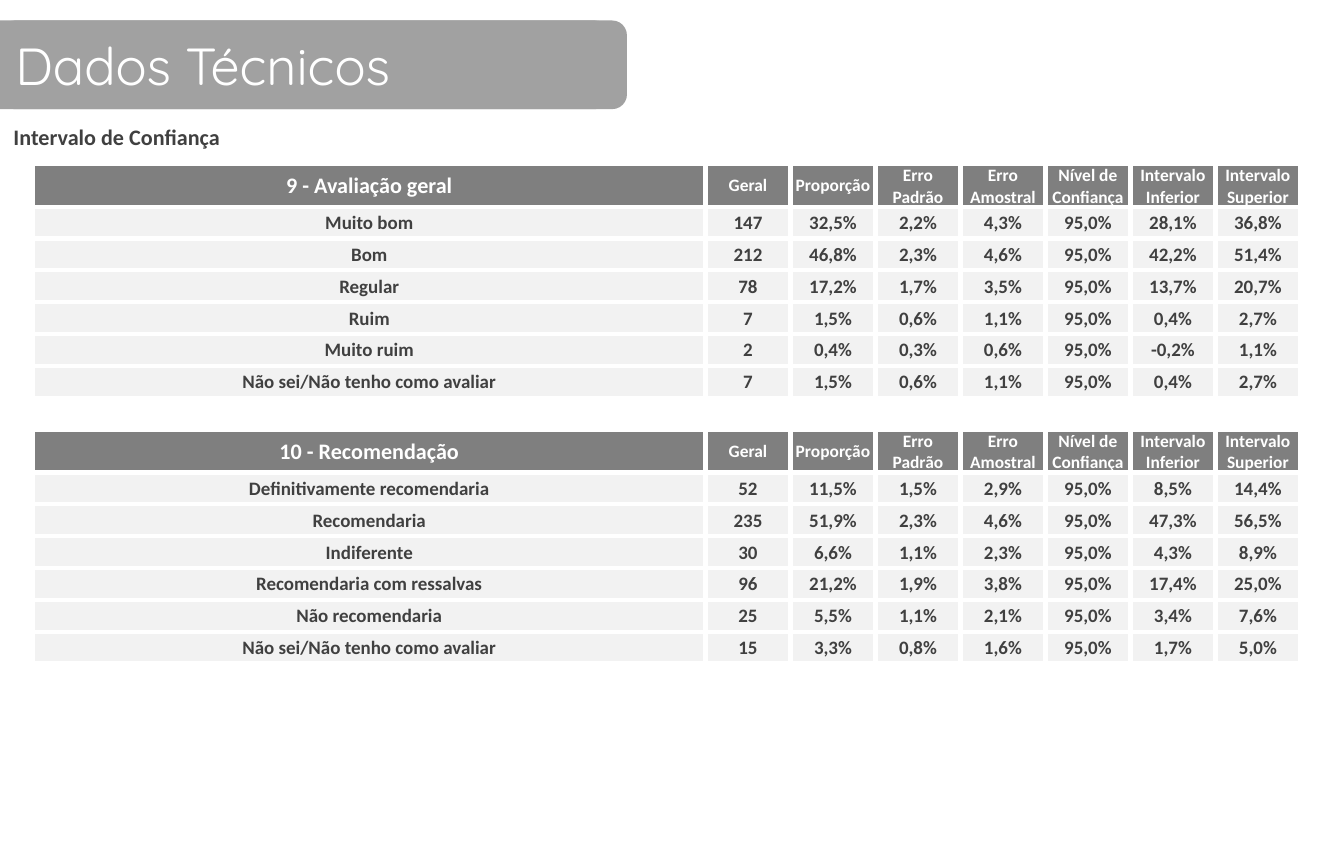
from dataclasses import dataclass

from pptx import Presentation
from pptx import util as u
from pptx.dml.color import RGBColor
from pptx.enum import shapes, text
from pptx.oxml import ns
from lxml import etree


@dataclass
class Theme:
    band: str = "A1A1A1"
    header: str = "7F7F7F"
    body: str = "F2F2F2"
    ink: str = "404040"
    white: str = "FFFFFF"
    title_font: str = "Quicksand"
    text_font: str = "Calibri"
    title_size: int = 33
    heading_size: int = 14
    label_size: int = 11
    body_size: int = 12
    border_width: int = 3


COLUMNS = ["Geral", "Proporção", "Erro Padrão", "Erro Amostral",
           "Nível de Confiança", "Intervalo Inferior", "Intervalo Superior"]
TABLE_WIDTH, ANSWER_WIDTH = 11.14, 5.91
VALUE_WIDTH = (TABLE_WIDTH - ANSWER_WIDTH) / len(COLUMNS)
COLUMN_WIDTHS = [ANSWER_WIDTH] + [VALUE_WIDTH] * len(COLUMNS)
HEADER_HEIGHT, ROW_HEIGHT = 0.36, 0.28

# Each row: answer, count, proportion, standard error, sampling error,
# confidence level, lower and upper limit
QUESTIONS = {
    "9 - Avaliação geral": [
        ["Muito bom", "147", "32,5%", "2,2%", "4,3%", "95,0%", "28,1%", "36,8%"],
        ["Bom", "212", "46,8%", "2,3%", "4,6%", "95,0%", "42,2%", "51,4%"],
        ["Regular", "78", "17,2%", "1,7%", "3,5%", "95,0%", "13,7%", "20,7%"],
        ["Ruim", "7", "1,5%", "0,6%", "1,1%", "95,0%", "0,4%", "2,7%"],
        ["Muito ruim", "2", "0,4%", "0,3%", "0,6%", "95,0%", "-0,2%", "1,1%"],
        ["Não sei/Não tenho como avaliar", "7", "1,5%", "0,6%", "1,1%", "95,0%", "0,4%", "2,7%"],
    ],
    "10 - Recomendação": [
        ["Definitivamente recomendaria", "52", "11,5%", "1,5%", "2,9%", "95,0%", "8,5%", "14,4%"],
        ["Recomendaria", "235", "51,9%", "2,3%", "4,6%", "95,0%", "47,3%", "56,5%"],
        ["Indiferente", "30", "6,6%", "1,1%", "2,3%", "95,0%", "4,3%", "8,9%"],
        ["Recomendaria com ressalvas", "96", "21,2%", "1,9%", "3,8%", "95,0%", "17,4%", "25,0%"],
        ["Não recomendaria", "25", "5,5%", "1,1%", "2,1%", "95,0%", "3,4%", "7,6%"],
        ["Não sei/Não tenho como avaliar", "15", "3,3%", "0,8%", "1,6%", "95,0%", "1,7%", "5,0%"],
    ],
}


class SlideBuilder:
    def __init__(self, page, theme):
        self.page = page
        self.theme = theme

    def span(self, para, words, size, color, font=None, bold=True):
        span = para.add_run()
        span.text = words
        span.font.name = font or self.theme.text_font
        span.font.size = u.Pt(size)
        span.font.bold = bold
        span.font.color.rgb = RGBColor.from_string(color)

    def band(self, left, top, width, height):
        box = self.page.shapes.add_shape(
            shapes.MSO_SHAPE.ROUNDED_RECTANGLE,
            u.Inches(left), u.Inches(top), u.Inches(width), u.Inches(height))
        box.shadow.inherit = False
        box.fill.solid()
        box.fill.fore_color.rgb = RGBColor.from_string(self.theme.band)
        box.line.fill.background()
        return box

    def title(self, words, left, top, width, height):
        frame = self.band(left, top, width, height).text_frame
        frame.vertical_anchor = text.MSO_ANCHOR.MIDDLE
        para = frame.paragraphs[0]
        para.alignment = text.PP_ALIGN.LEFT
        self.span(para, words, self.theme.title_size, self.theme.white,
                  self.theme.title_font, bold=False)

    def heading(self, words, left, top, width, height):
        box = self.page.shapes.add_textbox(
            u.Inches(left), u.Inches(top), u.Inches(width), u.Inches(height))
        box.text_frame.word_wrap = False
        box.text_frame.auto_size = text.MSO_AUTO_SIZE.SHAPE_TO_FIT_TEXT
        self.span(box.text_frame.paragraphs[0], words,
                  self.theme.heading_size, self.theme.ink)

    def borders(self, cell):
        properties = cell._tc.get_or_add_tcPr()
        for index, side in enumerate(("a:lnL", "a:lnR", "a:lnT", "a:lnB")):
            line = etree.Element(ns.qn(side), w=str(u.Pt(self.theme.border_width)))
            fill = etree.SubElement(line, ns.qn("a:solidFill"))
            etree.SubElement(fill, ns.qn("a:srgbClr"), val=self.theme.white)
            properties.insert(index, line)

    def cell(self, cell, words, size, color, fill):
        cell.vertical_anchor = text.MSO_ANCHOR.MIDDLE
        cell.margin_left = cell.margin_right = cell.margin_top = u.Inches(0.01)
        cell.margin_bottom = 0
        para = cell.text_frame.paragraphs[0]
        para.alignment = text.PP_ALIGN.CENTER
        if words:
            self.span(para, words, size, color)
            cell.fill.solid()
            cell.fill.fore_color.rgb = RGBColor.from_string(fill)
        else:
            # An empty cell needs its own type size to keep the row low
            etree.SubElement(para._p, ns.qn("a:endParaRPr"), sz=str(size * 100))
            cell.fill.background()
        self.borders(cell)

    def table(self, questions, left, top):
        theme = self.theme
        rows = []
        for question, answers in questions.items():
            if rows:
                rows.append((False, [""] * len(COLUMN_WIDTHS)))
            rows.append((True, [question] + COLUMNS))
            rows += [(False, answer) for answer in answers]
        heights = [HEADER_HEIGHT if is_header else ROW_HEIGHT for is_header, _ in rows]

        table = self.page.shapes.add_table(
            len(rows), len(COLUMN_WIDTHS), u.Inches(left), u.Inches(top),
            u.Inches(TABLE_WIDTH), u.Inches(sum(heights))).table
        table.first_row = table.horz_banding = False
        for column, width in zip(table.columns, COLUMN_WIDTHS):
            column.width = u.Inches(width)
        for row, height, (is_header, values) in zip(table.rows, heights, rows):
            row.height = u.Inches(height)
            for index, (cell, words) in enumerate(zip(row.cells, values)):
                if is_header:
                    size = theme.label_size if index else theme.heading_size
                    self.cell(cell, words, size, theme.white, theme.header)
                else:
                    self.cell(cell, words, theme.body_size, theme.ink, theme.body)


def main():
    deck = Presentation()
    # The page is 300 mm wide, about 11.81 inches
    deck.slide_width, deck.slide_height = u.Mm(300), u.Inches(7.5)
    page = deck.slides.add_slide(deck.slide_layouts[6])
    builder = SlideBuilder(page, Theme())

    # Title band
    builder.band(-0.24, 0.18, 5.75, 0.78)
    builder.title("Dados Técnicos", 0, 0.18, 5.36, 0.78)

    # Confidence intervals
    builder.heading("Intervalo de Confiança", 0.02, 1.04, 2.03, 0.34)
    builder.table(QUESTIONS, 0.29, 1.44)

    deck.save("out.pptx")


if __name__ == "__main__":
    main()
